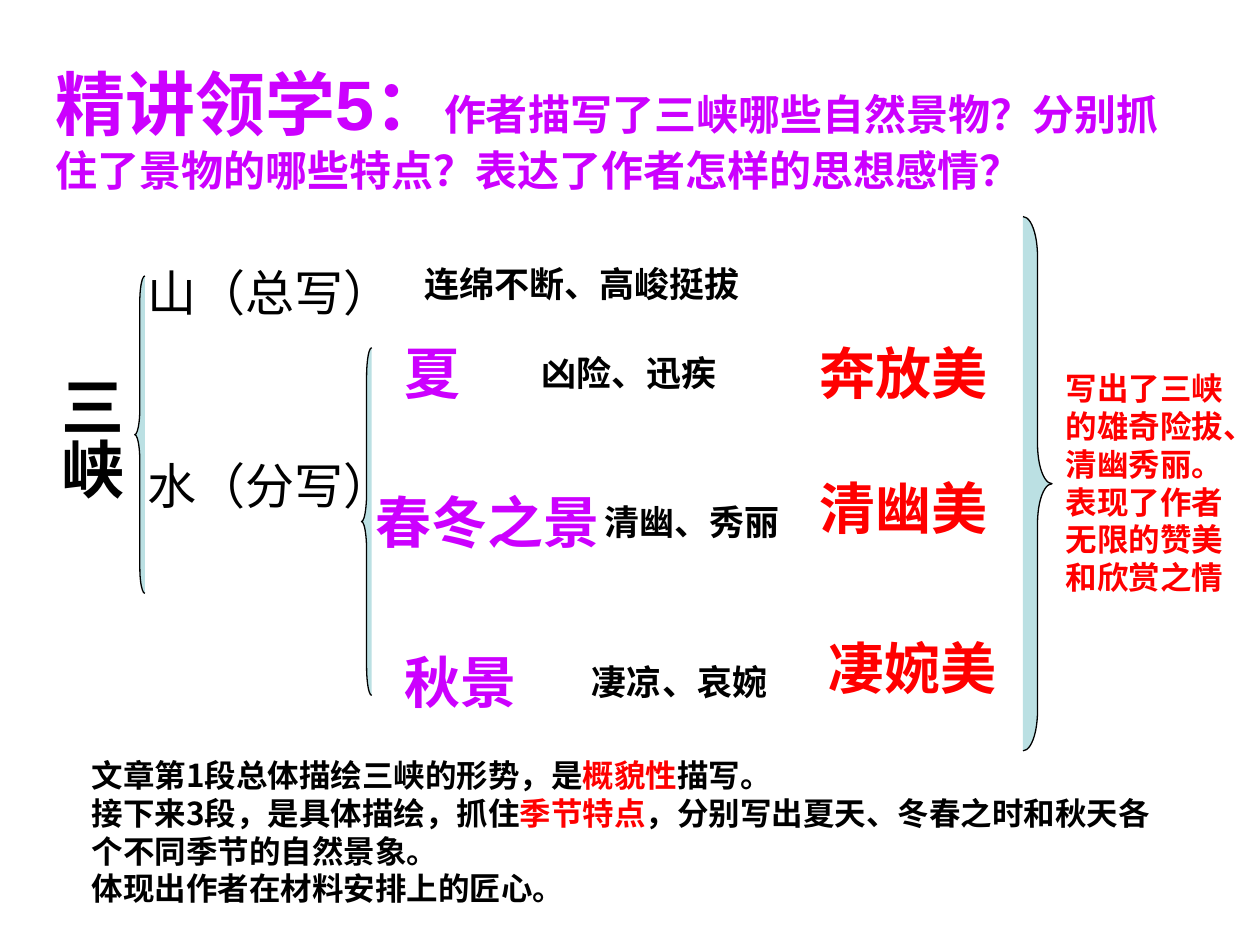
"""Build a slide that maps the scenery of the Three Gorges to its features and mood."""
from lxml import etree
from pptx import Presentation
from pptx.dml.color import RGBColor
from pptx.enum.shapes import MSO_SHAPE
from pptx.enum.text import MSO_ANCHOR, MSO_AUTO_SIZE, PP_ALIGN
from pptx.oxml.ns import qn
from pptx.util import Pt

LEFT, CENTER = PP_ALIGN.LEFT, PP_ALIGN.CENTER
TOP, MIDDLE = MSO_ANCHOR.TOP, MSO_ANCHOR.MIDDLE
NO_AUTOFIT = MSO_AUTO_SIZE.NONE
LEFT_BRACE, RIGHT_BRACE = MSO_SHAPE.LEFT_BRACE, MSO_SHAPE.RIGHT_BRACE
COLORS = {"purple": "CC00FF", "red": "FF0000", "black": "000000", "pale": "BBE0E3"}
CHINESE_FONT = "Noto Sans CJK SC"


def write(paragraph, text, size=18, color="black", bold=True, font="Arial", align=LEFT):
    """Add a formatted run to a paragraph."""
    paragraph.alignment = align
    run = paragraph.add_run()
    run.text = text
    run.font.size = Pt(size)
    run.font.bold = bold
    run.font.color.rgb = RGBColor.from_string(COLORS[color])
    run.font.name = font
    east_asian = etree.SubElement(run.font._element, qn("a:ea"))
    east_asian.set("typeface", CHINESE_FONT)


def place(shape, left, top, width, height):
    """Set the position and size of a shape in points."""
    shape.left, shape.top, shape.width, shape.height = map(Pt, (left, top, width, height))


presentation = Presentation()
presentation.slide_width, presentation.slide_height = Pt(720), Pt(540)
slide = presentation.slides.add_slide(presentation.slide_layouts[1])

title, body = slide.shapes.title, slide.placeholders[1]
place(title, 24.5, 45.4, 648, 55.4)
place(body, 77, 146.2, 164.9, 234.7)
for placeholder, anchor in ((title, MIDDLE), (body, TOP)):
    placeholder.text_frame.auto_size = NO_AUTOFIT
    placeholder.text_frame.vertical_anchor = anchor

heading = title.text_frame.paragraphs[0]
write(heading, "精讲领学5：", size=40, color="purple")
write(heading, "作者描写了三峡哪些自然景物？分别抓住了景物的哪些特点？表达了作者怎样的思想感情？",
      size=24, color="purple")

mountain = body.text_frame.paragraphs[0]
water = body.text_frame.add_paragraph()
for paragraph, text, gap in ((mountain, "山（总写）", 0), (water, "水（分写）", 77)):
    properties = paragraph._p.get_or_add_pPr()
    properties.set("marL", "0")
    properties.set("indent", "0")
    etree.SubElement(properties, qn("a:buNone"))
    paragraph.space_before = Pt(gap)
    write(paragraph, text, size=28, bold=False)

braces = [
    (LEFT_BRACE, 77, 157.7, 5.8, 181.4, 2.52),
    (LEFT_BRACE, 206.6, 198.7, 5.8, 198.7, 2.81),
    (RIGHT_BRACE, 584.6, 123.8, 16.6, 305.3, 1.37),
]
for kind, left, top, width, height, curve in braces:
    brace = slide.shapes.add_shape(kind, Pt(left), Pt(top), Pt(width), Pt(height))
    brace.adjustments[0] = curve
    brace.shadow.inherit = False
    brace.fill.solid()
    brace.fill.fore_color.rgb = RGBColor.from_string(COLORS["pale"])
    brace.line.color.rgb = RGBColor.from_string(COLORS["black"])
    brace.line.width = Pt(0.75)

feature = {"size": 20}
season = {"size": 32, "color": "purple"}
beauty = {"size": 32, "color": "red", "align": CENTER}
labels = [
    ("连绵不断、高峻挺拔", 235.4, 146.2, 195.1, 31.7, feature),
    ("夏", 223.9, 190.1, 46.1, 46, season),
    ("春冬之景", 207.4, 275, 143.3, 46, season),
    ("秋景", 223.9, 366.5, 83.5, 46, season),
    ("凶险、迅疾", 302.4, 197.3, 115.2, 31.7, feature),
    ("清幽、秀丽", 338.4, 282.2, 115.2, 31.7, feature),
    ("凄凉、哀婉", 331.2, 373.7, 115.2, 31.7, feature),
    ("奔放美", 460.8, 190.1, 110.9, 46, beauty),
    ("清幽美", 460.8, 267.1, 110.9, 46, beauty),
    ("凄婉美", 465.8, 358.6, 110.9, 46, beauty),
]
for text, left, top, width, height, style in labels:
    label = slide.shapes.add_textbox(Pt(left), Pt(top), Pt(width), Pt(height))
    label.text_frame.word_wrap = False
    write(label.text_frame.paragraphs[0], text, **style)

topic = slide.shapes.add_textbox(Pt(19.4), Pt(207.4), Pt(57.6), Pt(79.2))
topic.text_frame.word_wrap = False
topic.element.txBody.bodyPr.set("vert", "eaVert")
write(topic.text_frame.paragraphs[0], "三峡", size=36)

feeling = slide.shapes.add_textbox(Pt(601.9), Pt(207.4), Pt(110.9), Pt(138.2))
feeling.text_frame.word_wrap = True
write(feeling.text_frame.paragraphs[0],
      "写出了三峡的雄奇险拔、清幽秀丽。表现了作者无限的赞美和欣赏之情", color="red")

summary = slide.shapes.add_textbox(Pt(45.4), Pt(428.4), Pt(630), Pt(94.3))
summary.text_frame.word_wrap = True
summary_lines = [
    [("文章第1段总体描绘三峡的形势，是", "black"), ("概貌性", "red"), ("描写。", "black")],
    [("接下来3段，是具体描绘，抓住", "black"), ("季节特点", "red"),
     ("，分别写出夏天、冬春之时和秋天各个不同季节的自然景象。", "black")],
    [("体现出作者在材料安排上的匠心。", "black")],
]
for index, line in enumerate(summary_lines):
    frame = summary.text_frame
    paragraph = frame.add_paragraph() if index else frame.paragraphs[0]
    for text, color in line:
        write(paragraph, text, color=color, font=CHINESE_FONT)

presentation.save("out.pptx")
